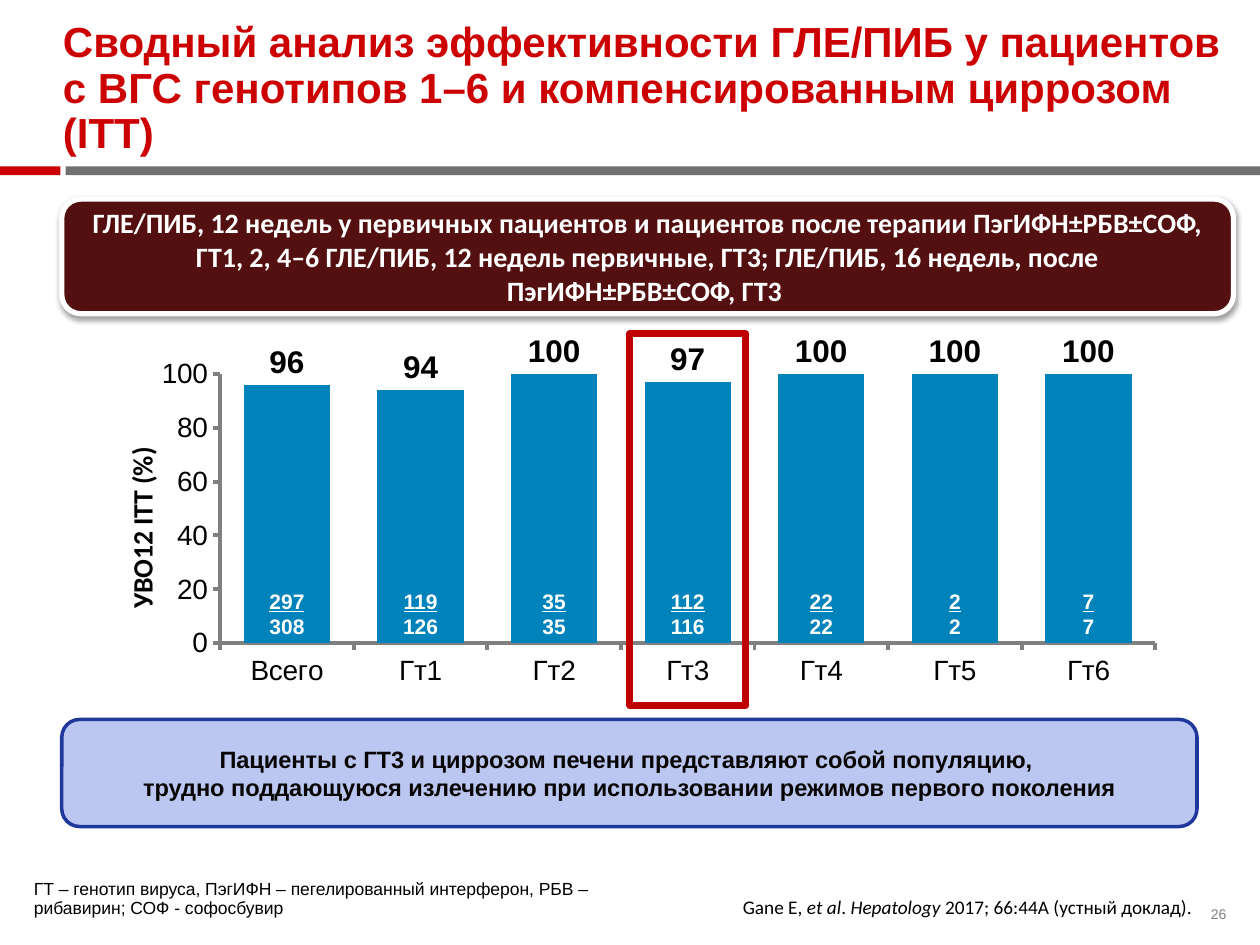
import pptx
import pptx.chart.data
import pptx.dml.color
import pptx.enum.chart
import pptx.enum.shapes
import pptx.enum.text
import pptx.oxml
import pptx.oxml.ns
import pptx.util

Inches = pptx.util.Inches
Pt = pptx.util.Pt
Shape = pptx.enum.shapes.MSO_SHAPE
Align = pptx.enum.text.PP_ALIGN
Anchor = pptx.enum.text.MSO_ANCHOR
Tick = pptx.enum.chart.XL_TICK_MARK

RESULTS = [
    ("Всего", 96, "297", "308"),
    ("Гт1", 94, "119", "126"),
    ("Гт2", 100, "35", "35"),
    ("Гт3", 97, "112", "116"),
    ("Гт4", 100, "22", "22"),
    ("Гт5", 100, "2", "2"),
    ("Гт6", 100, "7", "7"),
]
PLOT = {"x": 0.141, "y": 0.102, "w": 0.832, "h": 0.729}
HIGHLIGHTED = 3


def color(value):
    """Turn a hex string into a colour."""
    return pptx.dml.color.RGBColor.from_string(value)


def set_font(font, fill="000000", **values):
    """Set the colour and the other values of a font."""
    font.color.rgb = color(fill)
    for name, value in values.items():
        setattr(font, name, value)


def write(shape, paras, font, frame=None, para_format=None, inset=None):
    """Write paragraphs, each a list of (text, font changes) spans."""
    text_frame = shape.text_frame
    settings = {"word_wrap": True, **(frame or {})}
    if inset is not None:
        sides = ("left", "top", "right", "bottom")
        settings.update({f"margin_{side}": Inches(inset) for side in sides})
    for name, value in settings.items():
        setattr(text_frame, name, value)
    for index, spans in enumerate(paras):
        para = text_frame.add_paragraph() if index else text_frame.paragraphs[0]
        for name, value in (para_format or {}).items():
            setattr(para, name, value)
        for text, changes in spans:
            span = para.add_run()
            span.text = text
            set_font(span.font, **{**font, **changes})


def add_text(page, box, *args, **kwargs):
    """Add a text box filled with paragraphs."""
    write(page.shapes.add_textbox(*map(Inches, box)), *args, **kwargs)


def add_panel(page, box, kind, fill=None, line=None, width=0):
    """Add a preset shape without a shadow."""
    panel = page.shapes.add_shape(kind, *map(Inches, box))
    panel.shadow.inherit = False
    if fill:
        panel.fill.solid()
        panel.fill.fore_color.rgb = color(fill)
    else:
        panel.fill.background()
    if line:
        panel.line.color.rgb = color(line)
        panel.line.width = Pt(width)
    else:
        panel.line.fill.background()
    return panel


def add_header(page, box):
    """Add the title with the two-part rule under it."""
    left, top, width, height = box
    rule = top + 1.32
    add_panel(page, (left + 0.52, rule, width - 0.52, 0.07), Shape.RECTANGLE, "717171")
    add_panel(page, (left, rule, 0.48, 0.07), Shape.RECTANGLE, "CC0000")
    title = "Сводный анализ эффективности ГЛЕ/ПИБ у пациентов с ВГС генотипов 1–6 и компенсированным циррозом (ITT)"
    add_text(page, (left + 0.5, top + 0.51, 9.3, 0.74), [[(title, {})]],
             {"name": "Arial", "size": Pt(24), "bold": True, "fill": "CC0000"},
             {"vertical_anchor": Anchor.BOTTOM}, {"line_spacing": 0.9}, inset=0)


def add_regimen(page, box):
    """Add the dark panel that describes the treatment, with a soft shadow."""
    panel = add_panel(page, box, Shape.ROUNDED_RECTANGLE, "541010", "FFFFFF", 3)
    shadow = pptx.oxml.parse_xml(
        f'<a:outerShdw {pptx.oxml.ns.nsdecls("a")} blurRad="{Pt(3.1)}" dist="{Pt(1.6)}" '
        'dir="5400000" rotWithShape="0"><a:srgbClr val="000000"><a:alpha val="38000"/>'
        '</a:srgbClr></a:outerShdw>')
    panel._element.spPr.find(pptx.oxml.ns.qn("a:effectLst")).append(shadow)
    text = ("ГЛЕ/ПИБ, 12 недель у первичных пациентов и пациентов после терапии ПэгИФН±РБВ±СОФ, "
            "ГТ1, 2, 4–6 ГЛЕ/ПИБ, 12 недель первичные, ГТ3; ГЛЕ/ПИБ, 16 недель, после ПэгИФН±РБВ±СОФ, ГТ3 ")
    write(panel, [[(text, {})]],
          {"name": "Calibri", "size": Pt(16), "bold": True, "fill": "FFFFFF"},
          {"vertical_anchor": Anchor.MIDDLE}, {"alignment": Align.CENTER})


def add_conclusion(page, box):
    """Add the light panel with the conclusion."""
    panel = add_panel(page, box, Shape.ROUNDED_RECTANGLE, "BCC7F1", "20389C", 2)
    lines = ["Пациенты с ГТ3 и циррозом печени представляют собой популяцию, ",
             "трудно поддающуюся излечению при использовании режимов первого поколения"]
    write(panel, [[(line, {})] for line in lines],
          {"name": "Arial", "size": Pt(13.5), "bold": True, "fill": "070605"},
          {"vertical_anchor": Anchor.MIDDLE}, {"alignment": Align.CENTER}, inset=0.03)


def manual_layout(target, **places):
    """Build a chart layout from fractions of the chart's size."""
    inner = f'<c:layoutTarget val="{target}"/>' if target else ""
    modes = "".join(f'<c:{axis}Mode val="edge"/>' for axis in "xy")
    values = "".join(f'<c:{name} val="{value}"/>' for name, value in places.items())
    return pptx.oxml.parse_xml(
        f'<c:layout {pptx.oxml.ns.nsdecls("c")}><c:manualLayout>{inner}{modes}{values}'
        '</c:manualLayout></c:layout>')


def place(parent, layout, *before):
    """Replace the layout of a chart part, after the elements named."""
    qn = pptx.oxml.ns.qn
    for old in parent.findall(qn("c:layout")):
        parent.remove(old)
    position = sum(child.tag in map(qn, before) for child in parent)
    parent.insert(position, layout)


def add_response_chart(page, box):
    """Add the column chart of response rates with its patient counts."""
    left, top, width, height = box
    data = pptx.chart.data.CategoryChartData()
    data.categories = [row[0] for row in RESULTS]
    data.add_series("УВО12", [row[1] for row in RESULTS])
    chart = page.shapes.add_chart(pptx.enum.chart.XL_CHART_TYPE.COLUMN_CLUSTERED,
                                  *map(Inches, box), data).chart
    chart.has_legend = chart.has_title = False
    set_font(chart.font, name="Arial", size=Pt(16))
    for axis in (chart.category_axis, chart.value_axis):
        axis.has_major_gridlines = False
        axis.major_tick_mark = Tick.OUTSIDE
        axis.minor_tick_mark = Tick.NONE
        axis.format.line.color.rgb = color("808080")
        axis.format.line.width = Pt(2.25)
    scale = {"minimum_scale": 0, "maximum_scale": 100, "major_unit": 20}
    for name, value in scale.items():
        setattr(chart.value_axis, name, value)
    title = chart.value_axis.axis_title
    title.text_frame.text = "УВО12 ITT (%)"
    set_font(title.text_frame.paragraphs[0].runs[0].font, name="Calibri", size=Pt(16), bold=True)
    place(title._element, manual_layout(None, x=0.05, y=0.29), "c:tx")
    place(chart._chartSpace.chart.plotArea, manual_layout("inner", **PLOT))
    plot = chart.plots[0]
    plot.gap_width = 55
    plot.vary_by_categories = False
    series = plot.series[0]
    series.format.fill.solid()
    series.format.fill.fore_color.rgb = color("0082BA")
    labels = series.data_labels
    labels.show_value = True
    labels.position = pptx.enum.chart.XL_LABEL_POSITION.OUTSIDE_END
    set_font(labels.font, name="Arial", size=Pt(18), bold=True)

    step = PLOT["w"] * width / len(RESULTS)
    first = left + PLOT["x"] * width + step / 2
    for index, (_, _, responders, patients) in enumerate(RESULTS):
        add_text(page, (first + index * step - 0.22, top + 2.02, 0.44, 0.4),
                 [[(responders, {"underline": True})], [(patients, {})]],
                 {"name": "Arial", "size": Pt(12), "bold": True, "fill": "FFFFFF"},
                 para_format={"alignment": Align.CENTER}, inset=0)
    add_panel(page, (first + HIGHLIGHTED * step - 0.46, top, 0.92, height), Shape.RECTANGLE,
              line="C00000", width=4)


def add_footer(page, box):
    """Add the abbreviations, the citation and the page number."""
    left, top, _, _ = box
    tight = {"line_spacing": 0.9}
    abbreviations = "ГТ – генотип вируса, ПэгИФН – пегелированный интерферон, РБВ – рибавирин; СОФ - софосбувир"
    add_text(page, (left + 0.27, top, 4.47, 0.44), [[(abbreviations, {})]],
             {"name": "Arial", "size": Pt(10)}, para_format=tight, inset=0)
    italic = {"italic": True}
    citation = [("Gane E, ", {}), ("et al", italic), (". ", {}), ("Hepatology", italic),
                (" 2017; 66:44A (устный доклад).", {})]
    add_text(page, (left + 5.14, top + 0.09, 4.42, 0.32), [citation],
             {"name": "Calibri", "size": Pt(11)},
             para_format={**tight, "alignment": Align.RIGHT})
    add_text(page, (left + 9.61, top + 0.21, 0.35, 0.27), [[("26", {})]],
             {"name": "Arial", "size": Pt(8), "fill": "808080"}, para_format=tight, inset=0)


def main():
    """Build the slide and save the deck."""
    deck = pptx.Presentation()
    deck.slide_width, deck.slide_height = Inches(10), Inches(7.5)
    page = deck.slides.add_slide(deck.slide_layouts[6])
    add_header(page, (0, 0, 10, 1.39))
    add_regimen(page, (0.49, 1.58, 9.3, 0.91))
    add_conclusion(page, (0.49, 5.71, 9.01, 0.85))
    add_response_chart(page, (0.49, 2.65, 8.92, 2.95))
    add_footer(page, (0, 6.99, 10, 0.51))
    deck.save("out.pptx")


if __name__ == "__main__":
    main()
